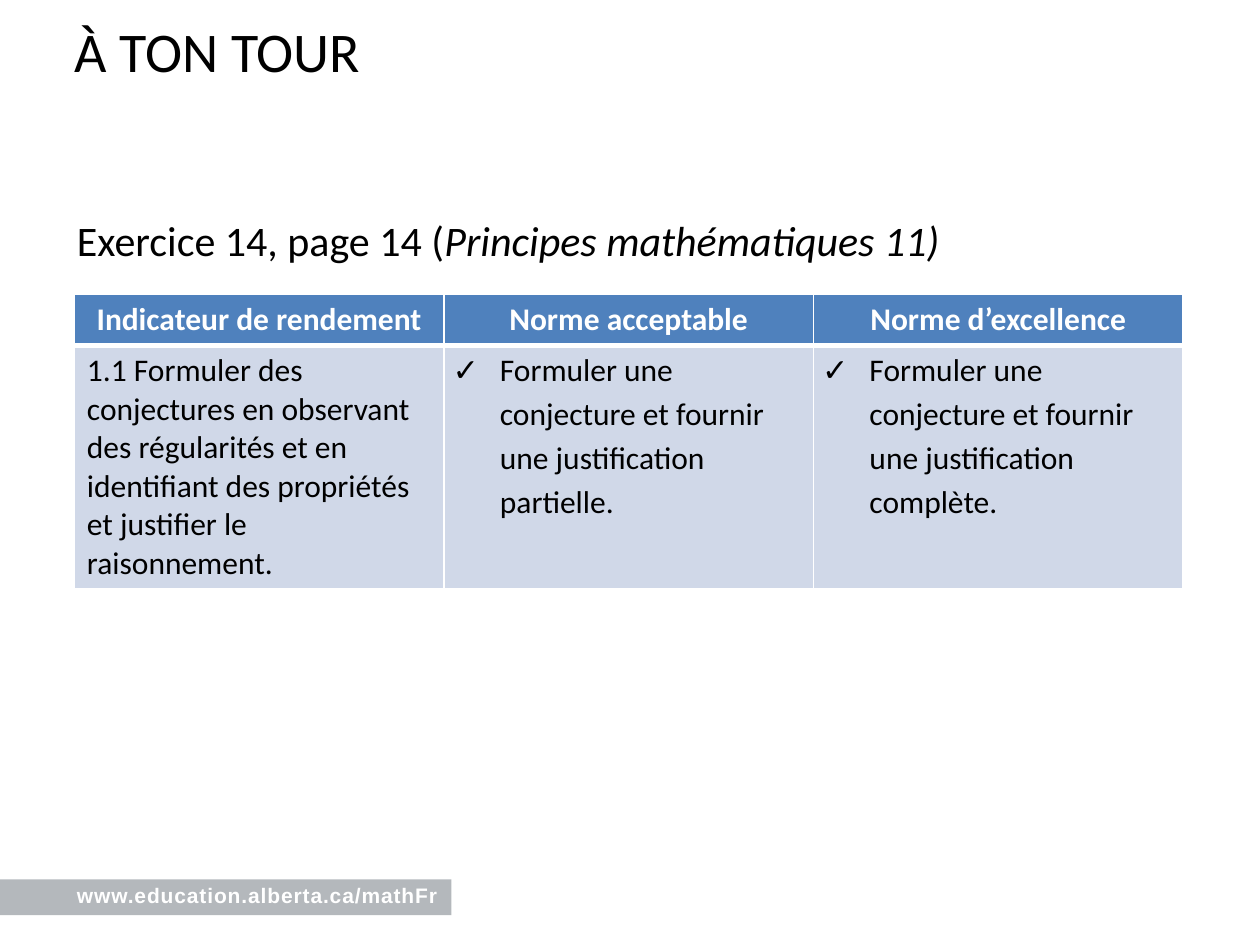
from lxml import etree
from pptx import Presentation
from pptx.dml import color
from pptx.enum import shapes, text
from pptx.oxml import ns
from pptx.util import Pt

COLORS = {"text": "000000", "white": "FFFFFF", "bar": "6A737B",
          "header": "4F81BD", "cell": "D0D8E8"}
HEADERS = ["Indicateur de rendement", "Norme acceptable", "Norme d’excellence"]
DETAILS = [
    "1.1 Formuler des conjectures en observant des régularités et en "
    "identifiant des propriétés et justifier le raisonnement.",
    "Formuler une conjecture et fournir une justification partielle.",
    "Formuler une conjecture et fournir une justification complète.",
]
FRAME = {"margin_left": 0, "margin_top": 0, "margin_right": 0, "margin_bottom": 0,
         "word_wrap": True, "auto_size": text.MSO_AUTO_SIZE.NONE,
         "vertical_anchor": text.MSO_ANCHOR.TOP}


def apply(target, values):
    """Set each named attribute on the target."""
    for name, value in values.items():
        setattr(target, name, value)


def rgb(name):
    """Return a palette colour."""
    return color.RGBColor.from_string(COLORS[name])


def add_node(parent, tag, **values):
    """Append a drawing element and return it."""
    return etree.SubElement(parent, ns.qn(tag), values)


def add_span(para, words, size, tint="text", **values):
    """Add a formatted run to a paragraph."""
    span = para.add_run()
    span.text = words
    apply(span.font, {"name": "Calibri", "size": Pt(size), "bold": False, **values})
    span.font.color.rgb = rgb(tint)
    return span


def place(shape, left, top, width, height):
    """Position a text shape and return its first paragraph."""
    apply(shape, {"left": Pt(left), "top": Pt(top),
                  "width": Pt(width), "height": Pt(height)})
    apply(shape.text_frame, FRAME)
    para = shape.text_frame.paragraphs[0]
    apply(para, {"alignment": text.PP_ALIGN.LEFT, "space_before": Pt(0)})
    return para


def fill_title(page, left, top, width, height):
    """Write the heading in the title placeholder."""
    para = place(page.shapes.title, left, top, width, height)
    add_span(para, "À TON TOUR", 32)


def fill_body(page, left, top, width, height):
    """Write the exercise reference in the body placeholder."""
    para = place(page.placeholders[1], left, top, width, height)
    properties = para._p.get_or_add_pPr()
    properties.set("marL", "0")
    properties.set("indent", "0")
    add_node(properties, "a:buNone")
    add_span(para, "Exercice 14, page 14 (", 24)
    add_span(para, "Principes mathématiques 11)", 24, italic=True)


def add_borders(cell, bottom):
    """Draw white cell edges with the given bottom width."""
    properties = cell._tc.get_or_add_tcPr()
    for side, width in {"L": 1, "R": 1, "T": 1, "B": bottom}.items():
        line = add_node(properties, f"a:ln{side}", w=str(Pt(width)))
        fill = add_node(line, "a:solidFill")
        add_node(fill, "a:srgbClr", val=COLORS["white"])


def add_check(cell):
    """Give a cell a hanging check mark and open line spacing."""
    apply(cell, {"margin_left": Pt(5), "margin_right": Pt(5),
                 "margin_top": 0, "margin_bottom": 0})
    para = cell.text_frame.paragraphs[0]
    properties = para._p.get_or_add_pPr()
    properties.set("marL", str(Pt(27)))
    properties.set("indent", str(-Pt(27)))
    add_node(properties, "a:buFont", typeface="Arial")
    add_node(properties, "a:buChar", char="✓")
    apply(para, {"line_spacing": 1.15, "space_after": Pt(3)})


def add_criteria(page, left, top, width, height):
    """Add the table of performance standards."""
    frame = page.shapes.add_table(2, len(HEADERS), Pt(left), Pt(top),
                                  Pt(width), Pt(height))
    table = frame.table
    header_height = 29.5
    table.rows[0].height = Pt(header_height)
    table.rows[1].height = Pt(height - header_height)
    for index, (header, detail) in enumerate(zip(HEADERS, DETAILS)):
        table.columns[index].width = Pt(width / len(HEADERS))
        top_cell, cell = table.cell(0, index), table.cell(1, index)
        add_borders(top_cell, 3)
        add_borders(cell, 1)
        for part, tint in ((top_cell, "header"), (cell, "cell")):
            part.fill.solid()
            part.fill.fore_color.rgb = rgb(tint)
        para = top_cell.text_frame.paragraphs[0]
        para.alignment = text.PP_ALIGN.CENTER
        add_span(para, header, 18, "white", bold=True)
        if index:
            add_check(cell)
        add_span(cell.text_frame.paragraphs[0], detail, 18)


def add_footer(page, left, top, width, height):
    """Add the translucent bar and the web address on it."""
    bar = page.shapes.add_shape(shapes.MSO_SHAPE.RECTANGLE, Pt(left), Pt(top),
                                Pt(width), Pt(height))
    bar.shadow.inherit = False
    bar.line.fill.background()
    bar.fill.solid()
    bar.fill.fore_color.rgb = rgb("bar")
    tint = bar._element.spPr.find(".//" + ns.qn("a:srgbClr"))
    add_node(tint, "a:alpha", val="50000")
    indent = 44
    label = page.shapes.add_textbox(0, 0, 0, 0)
    para = place(label, left + indent, top + 2, width - indent, 14.5)
    span = add_span(para, "www.education.alberta.ca/mathFr", 12, "white",
                    name="Arial", bold=True)
    span.font._element.set("spc", "50")


def main():
    """Build and save the slide."""
    deck = Presentation()
    apply(deck, {"slide_width": Pt(720), "slide_height": Pt(540)})
    page = deck.slides.add_slide(deck.slide_layouts[1])
    add_footer(page, 0, 502.5, 258, 20.5)
    fill_title(page, 42.5, 9.5, 465, 50)
    add_criteria(page, 42.5, 168, 633.6, 168.5)
    fill_body(page, 44, 122.5, 633.6, 357)
    deck.save("out.pptx")


if __name__ == "__main__":
    main()
